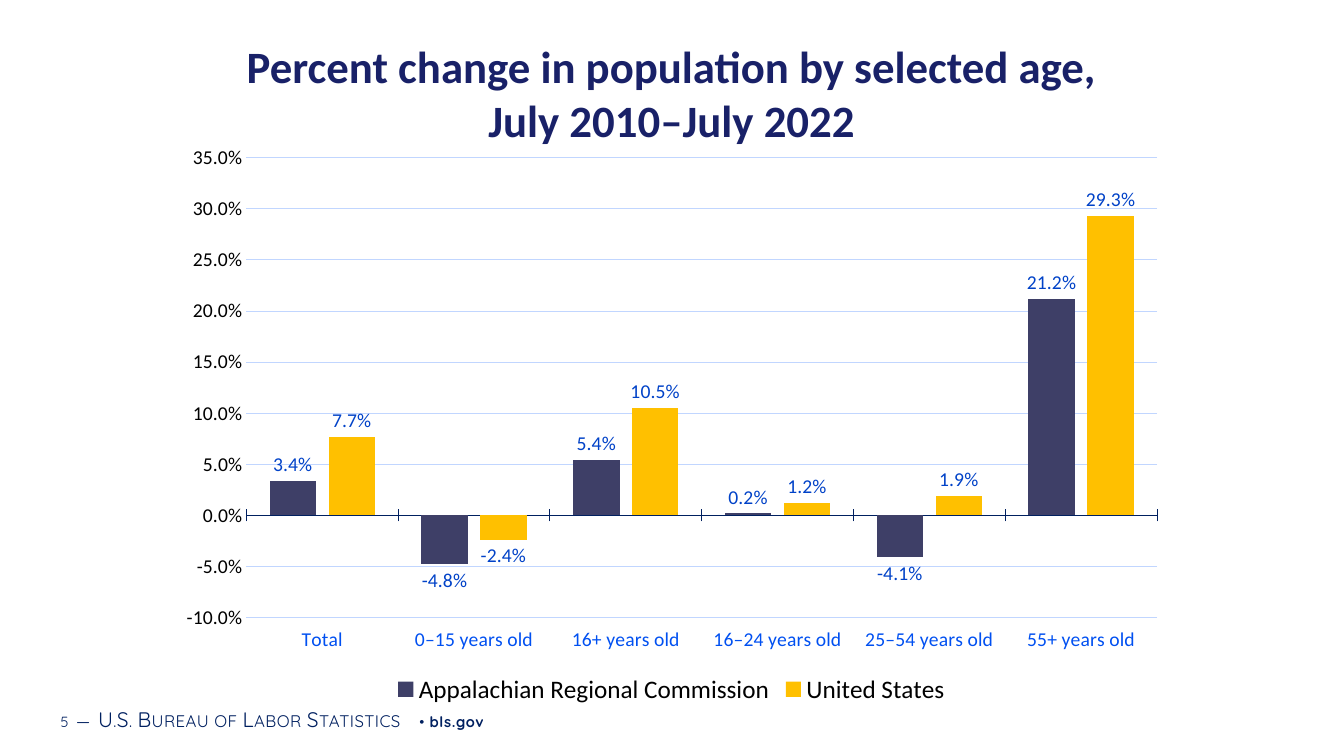
from pptx import Presentation
from pptx.chart.data import CategoryChartData
from pptx.dml.color import RGBColor
from pptx.enum.chart import (XL_CHART_TYPE, XL_LABEL_POSITION,
                             XL_LEGEND_POSITION, XL_TICK_LABEL_POSITION,
                             XL_TICK_MARK)
from pptx.enum.text import MSO_ANCHOR, PP_ALIGN
from pptx.oxml import parse_xml
from pptx.oxml.ns import nsdecls, qn
from pptx.util import Cm, Pt

NAVY = RGBColor(0x00, 0x20, 0x60)
TITLE_BLUE = RGBColor(0x19, 0x21, 0x68)
LABEL_BLUE = RGBColor(0x00, 0x42, 0xC8)
CATEGORY_BLUE = RGBColor(0x00, 0x50, 0xF1)
GRID_BLUE = RGBColor(0xC1, 0xD6, 0xFF)
SLATE = RGBColor(0x3E, 0x3F, 0x67)
GOLD = RGBColor(0xFF, 0xC0, 0x00)
BLACK = RGBColor(0x00, 0x00, 0x00)

PERCENT = "0.0%"
AGES = ["Total", "0–15 years old", "16+ years old", "16–24 years old",
        "25–54 years old", "55+ years old"]
SERIES = [
    ("Appalachian Regional Commission", SLATE,
     [0.034, -0.048, 0.054, 0.002, -0.041, 0.212]),
    ("United States", GOLD, [0.077, -0.024, 0.105, 0.012, 0.019, 0.293]),
]
# text, size, letter spacing in 1/100 pt, small caps, bold
FOOTER_RUNS = [
    ("5", 10.5, 50, False, False),
    (" ", 16, 50, False, False),
    ("—", 15, 30, True, False),
    (" ", 16, 50, False, False),
    ("U.S. Bureau of Labor Statistics", 15, 30, True, False),
    (" • ", 10.5, 50, False, False),
    ("bls.gov", 10.5, 50, False, True),
]


def style_font(font, size, color, name="Calibri", bold=False):
    font.size = Pt(size)
    font.name = name
    font.bold = bold
    font.color.rgb = color


def add_text_box(slide, left, top, width, height):
    tf = slide.shapes.add_textbox(Cm(left), Cm(top), Cm(width),
                                  Cm(height)).text_frame
    tf.word_wrap = True
    return tf


def add_title(slide, text):
    tf = add_text_box(slide, 1.37, 0.86, 31.12, 2.24)
    tf.text = text
    p = tf.paragraphs[0]
    p.alignment = PP_ALIGN.CENTER
    for r in p.runs:
        style_font(r.font, 32, TITLE_BLUE, bold=True)


def add_footer(slide):
    tf = add_text_box(slide, 1.35, 17.6, 21.51, 1.02)
    tf.vertical_anchor = MSO_ANCHOR.MIDDLE
    tf.margin_left = tf.margin_right = Cm(0.18)
    tf.margin_top = tf.margin_bottom = Cm(0.1)
    p = tf.paragraphs[0]
    for text, size, spacing, small_caps, bold in FOOTER_RUNS:
        r = p.add_run()
        r.text = text
        style_font(r.font, size, NAVY, "Quicksand", bold)
        rPr = r.font._element
        rPr.set("spc", str(spacing))
        if small_caps:
            rPr.set("cap", "small")


def set_plot_area(chart, x, y, w, h):
    """Fix the inner plot area, in fractions of the chart's size."""
    plot_area = chart._chartSpace.find(".//" + qn("c:plotArea"))
    for layout in plot_area.findall(qn("c:layout")):
        plot_area.remove(layout)
    sizes = "".join(f'<c:{tag} val="{val}"/>'
                    for tag, val in zip("xywh", (x, y, w, h)))
    plot_area.insert(0, parse_xml(
        f'<c:layout {nsdecls("c")}><c:manualLayout>'
        '<c:layoutTarget val="inner"/><c:xMode val="edge"/>'
        f'<c:yMode val="edge"/>{sizes}</c:manualLayout></c:layout>'))


def style_axes(chart):
    ages = chart.category_axis
    ages.tick_label_position = XL_TICK_LABEL_POSITION.LOW
    ages.major_tick_mark = XL_TICK_MARK.CROSS
    ages.format.line.color.rgb = NAVY
    ages.format.line.width = Pt(0.75)
    style_font(ages.tick_labels.font, 14, CATEGORY_BLUE)

    change = chart.value_axis
    change.minimum_scale, change.maximum_scale = -0.1, 0.35
    change.major_unit = 0.05
    change.major_tick_mark = XL_TICK_MARK.NONE
    change.format.line.fill.background()
    change.major_gridlines.format.line.color.rgb = GRID_BLUE
    change.major_gridlines.format.line.width = Pt(0.75)
    change.tick_labels.number_format = PERCENT
    change.tick_labels.number_format_is_linked = False
    style_font(change.tick_labels.font, 14, BLACK)


def style_series(series, color):
    series.format.fill.solid()
    series.format.fill.fore_color.rgb = color
    series.invert_if_negative = False
    labels = series.data_labels
    labels.show_value = True
    labels.number_format = PERCENT
    labels.number_format_is_linked = False
    labels.position = XL_LABEL_POSITION.OUTSIDE_END
    style_font(labels.font, 14, LABEL_BLUE)


def add_population_chart(slide):
    data = CategoryChartData(number_format=PERCENT)
    data.categories = AGES
    for name, _, values in SERIES:
        data.add_series(name, values)
    chart = slide.shapes.add_chart(
        XL_CHART_TYPE.COLUMN_CLUSTERED, Cm(4.17), Cm(3.4), Cm(25.5),
        Cm(14.48), data).chart
    chart.has_title = False
    style_font(chart.font, 10, NAVY)
    chart.has_legend = True
    chart.legend.position = XL_LEGEND_POSITION.BOTTOM
    chart.legend.include_in_layout = False
    style_font(chart.legend.font, 18, BLACK)

    plot = chart.plots[0]
    plot.gap_width = 100
    plot.overlap = -27
    plot.vary_by_categories = False
    for series, (_, color, _) in zip(plot.series, SERIES):
        style_series(series, color)
    style_axes(chart)
    set_plot_area(chart, 0.08, 0.04, 0.9, 0.8)


def main():
    prs = Presentation()
    prs.slide_width, prs.slide_height = Cm(33.87), Cm(19.05)
    slide = prs.slides.add_slide(prs.slide_layouts[6])
    add_footer(slide)
    add_title(slide, "Percent change in population by selected age,\v"
                     "July 2010–July 2022")
    add_population_chart(slide)
    prs.save("out.pptx")


if __name__ == "__main__":
    main()
